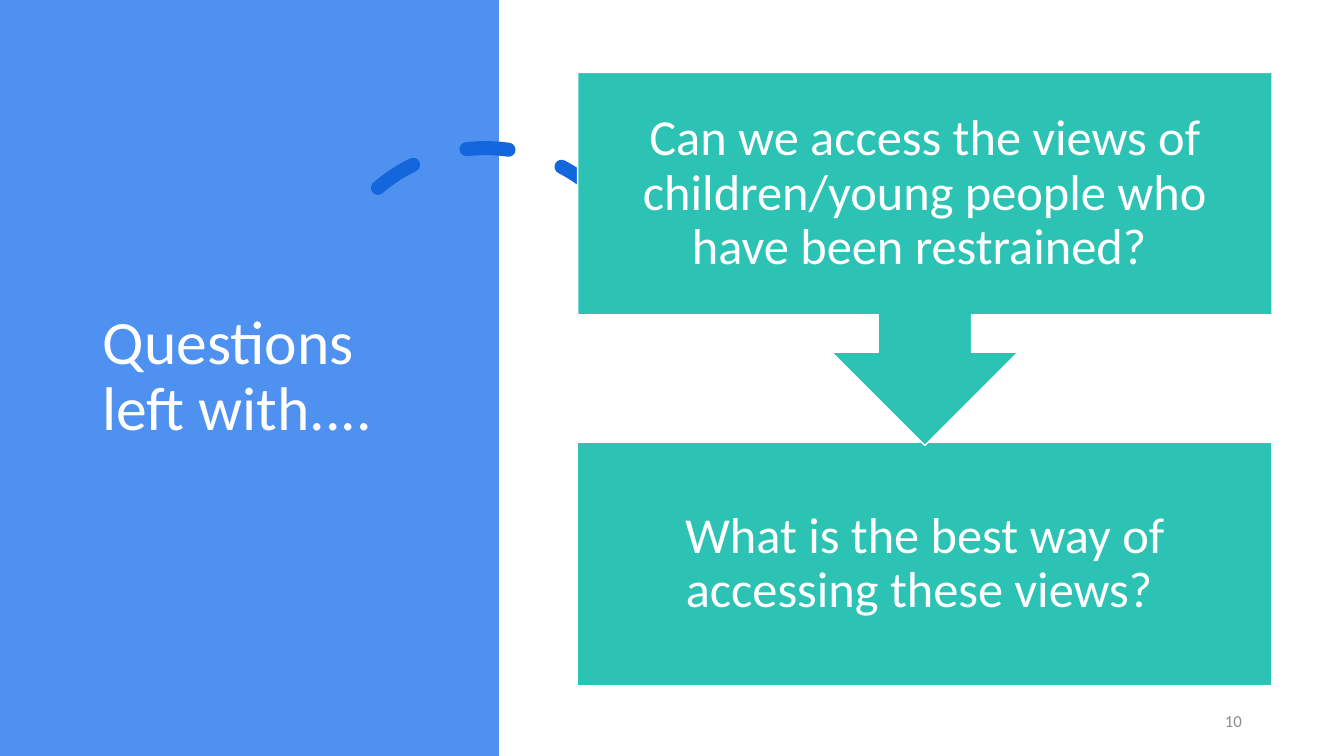
from dataclasses import dataclass

from lxml.etree import SubElement
from pptx import Presentation
from pptx.dml.color import RGBColor
from pptx.enum.dml import MSO_LINE_DASH_STYLE as Dash
from pptx.enum.shapes import MSO_SHAPE as Preset
from pptx.enum.text import MSO_ANCHOR as Anchor, MSO_AUTO_SIZE as AutoSize, PP_ALIGN as Align
from pptx.oxml.ns import qn
from pptx.shapes.autoshape import Shape
from pptx.slide import Slide
from pptx.util import Pt

WHITE = "FFFFFF"
BLUE = "4E91F0"
DARK_BLUE = "1366DC"
TEAL = "2CC3B4"
GRAY = "8C8C8C"

SLIDE_WIDTH, SLIDE_HEIGHT = 960, 540
QUESTION_LEFT, QUESTION_WIDTH, QUESTION_HEIGHT = 412.6, 496.1, 173.5


@dataclass
class Frame:
    left: float
    top: float
    width: float
    height: float

    def lengths(self) -> tuple[Pt, Pt, Pt, Pt]:
        return Pt(self.left), Pt(self.top), Pt(self.width), Pt(self.height)


@dataclass
class Question:
    text: str
    top: float
    preset: Preset
    shape_height: float
    rotation: float = 0


QUESTIONS = [
    Question("What is the best way of accessing these views? ",
             316.1, Preset.RECTANGLE, QUESTION_HEIGHT),
    Question("Can we access the views of children/young people who have been restrained? ",
             51.8, Preset.UP_ARROW_CALLOUT, 266.4, 180),
]


def color(code: str) -> RGBColor:
    return RGBColor.from_string(code)


def add_preset(slide: Slide, preset: Preset, frame: Frame, fill: str | None = None,
               line: str | None = None, line_width: float = 1, rotation: float = 0) -> Shape:
    shape = slide.shapes.add_shape(preset, *frame.lengths())
    shape.shadow.inherit = False
    shape.rotation = rotation
    if fill:
        shape.fill.solid()
        shape.fill.fore_color.rgb = color(fill)
    else:
        shape.fill.background()
    if line:
        shape.line.color.rgb = color(line)
        shape.line.width = Pt(line_width)
    else:
        shape.line.fill.background()
    return shape


def write_text(box: Shape, text: str, *, size: float, ink: str = WHITE,
               align: Align = Align.LEFT, spacing: float = 1.0,
               inset: float | None = None) -> None:
    """Fill a box with one vertically centred paragraph."""
    frame = box.text_frame
    frame.word_wrap = True
    frame.auto_size = AutoSize.NONE
    frame.vertical_anchor = Anchor.MIDDLE
    if inset is not None:
        frame.margin_left = frame.margin_right = Pt(inset)
        frame.margin_top = frame.margin_bottom = Pt(inset)
    para = frame.paragraphs[0]
    para.alignment = align
    para.line_spacing = spacing
    span = para.add_run()
    span.text = text
    span.font.name = "Calibri"
    span.font.size = Pt(size)
    span.font.color.rgb = color(ink)


def add_dashed_arc(slide: Slide) -> None:
    arc = add_preset(slide, Preset.ARC, Frame(229, 105.8, 235.4, 235.4),
                     line=DARK_BLUE, line_width=10, rotation=345.8)
    arc.adjustments[0] = 146.13
    arc.adjustments[1] = 0
    arc.line.dash_style = Dash.DASH
    line = arc.line._get_or_add_ln()
    line.set("cap", "rnd")
    SubElement(line, qn("a:round"))


def place_title(slide: Slide) -> None:
    """Format the title and bring it in front of the panel."""
    title = slide.shapes.title
    title.left, title.top, title.width, title.height = Frame(66.2, 50.4, 232.6, 438.5).lengths()
    write_text(title, "Questions left with....", size=44, spacing=0.9)
    title.element.getparent().append(title.element)


def add_question(slide: Slide, question: Question) -> None:
    add_preset(slide, question.preset,
               Frame(QUESTION_LEFT, question.top, QUESTION_WIDTH, question.shape_height),
               fill=TEAL, line=WHITE, rotation=question.rotation)
    frame = Frame(QUESTION_LEFT, question.top, QUESTION_WIDTH, QUESTION_HEIGHT)
    box = slide.shapes.add_textbox(*frame.lengths())
    write_text(box, question.text, size=36, align=Align.CENTER, spacing=0.9, inset=20.2)


def main() -> None:
    deck = Presentation()
    deck.slide_width, deck.slide_height = Pt(SLIDE_WIDTH), Pt(SLIDE_HEIGHT)
    slide = deck.slides.add_slide(deck.slide_layouts[5])
    add_preset(slide, Preset.RECTANGLE, Frame(0, 0, 356.4, SLIDE_HEIGHT), fill=BLUE)
    add_dashed_arc(slide)
    place_title(slide)
    number = slide.shapes.add_textbox(*Frame(761, 500.4, 133.2, 28.8).lengths())
    write_text(number, "10", size=12, ink=GRAY, align=Align.RIGHT)
    for question in QUESTIONS:
        add_question(slide, question)
    deck.save("out.pptx")


if __name__ == "__main__":
    main()
